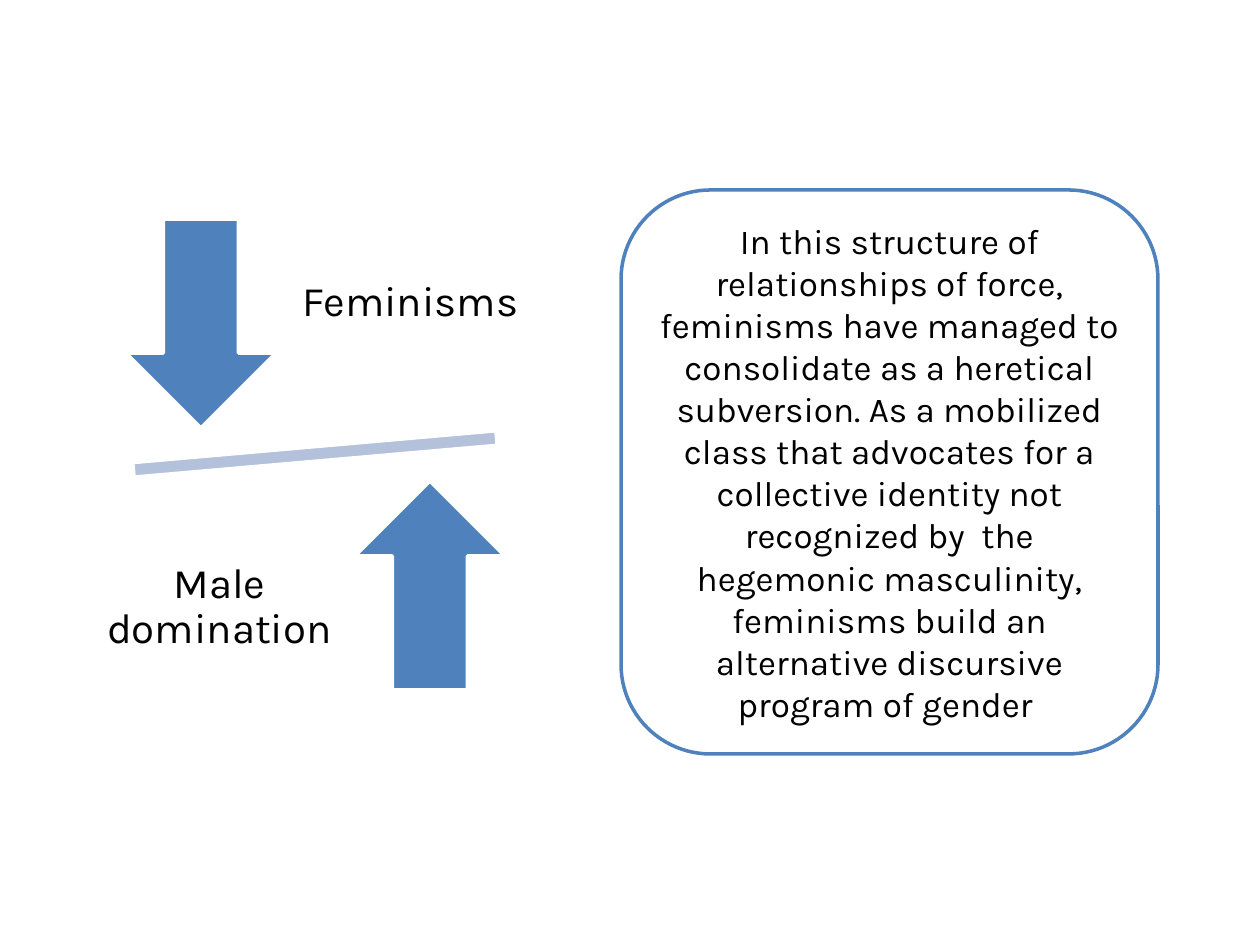
from pptx import Presentation
from pptx.dml.color import RGBColor
from pptx.enum.shapes import MSO_SHAPE
from pptx.enum.text import MSO_ANCHOR, PP_ALIGN
from pptx.util import Emu, Pt

DOWN = MSO_SHAPE.DOWN_ARROW
UP = MSO_SHAPE.UP_ARROW
MINUS = MSO_SHAPE.MATH_MINUS
ROUND = MSO_SHAPE.ROUNDED_RECTANGLE
MIDDLE = MSO_ANCHOR.MIDDLE
CENTER = PP_ALIGN.CENTER

SCALE = 914400 / 126
FONT = "Karla"
COLORS = {"blue": "4F81BD", "pale": "B3C1DB", "white": "FFFFFF", "black": "000000"}
CLAIM = (
    "In this structure of relationships of force, feminisms have managed to "
    "consolidate as a heretical subversion. As a mobilized class that advocates "
    "for a collective identity not recognized by  the hegemonic masculinity, "
    "feminisms build an alternative discursive program of gender "
)


def px(n):
    return Emu(round(n * SCALE))


def color(name):
    return RGBColor.from_string(COLORS[name])


def add_form(slide, kind, box, fill, line):
    form = slide.shapes.add_shape(kind, *map(px, box))
    form.shadow.inherit = False
    form.fill.solid()
    form.fill.fore_color.rgb = color(fill)
    form.line.color.rgb = color(line)
    form.line.width = Pt(2)
    return form


def set_text(form, text, size):
    frame = form.text_frame
    frame.word_wrap = True
    frame.vertical_anchor = MIDDLE
    frame.text = text
    para = frame.paragraphs[0]
    para.alignment = CENTER
    font = para.runs[0].font
    font.name = FONT
    font.size = Pt(size)
    font.color.rgb = color("black")
    return frame


def add_label(slide, box, text):
    frame = set_text(slide.shapes.add_textbox(*map(px, box)), text, 24)
    frame.margin_left = frame.margin_right = px(24)
    frame.margin_top = frame.margin_bottom = px(24)
    frame.paragraphs[0].line_spacing = 0.9


def add_balance(slide, left, top):
    beam = add_form(slide, MINUS, (left + 18, top + 230, 496, 62), "pale", "white")
    beam.rotation = -5
    sides = [
        (DOWN, (77, 26), "Feminisms", (165, 0, 393, 220)),
        (UP, (306, 288), "Male domination", (0, 330, 341, 168)),
    ]
    for kind, (x, y), text, (tx, ty, wide, high) in sides:
        add_form(slide, kind, (left + x, top + y, 150, 209), "blue", "white")
        add_label(slide, (left + tx, top + ty, wide, high), text)


def add_claim(slide, box):
    set_text(add_form(slide, ROUND, box, "white", "blue"), CLAIM, 20)


def main():
    deck = Presentation()
    deck.slide_width = px(1260)
    deck.slide_height = px(945)
    slide = deck.slides.add_slide(deck.slide_layouts[6])
    add_balance(slide, 49, 193)
    add_claim(slide, (621, 190, 537, 564))
    deck.save("out.pptx")


if __name__ == "__main__":
    main()
